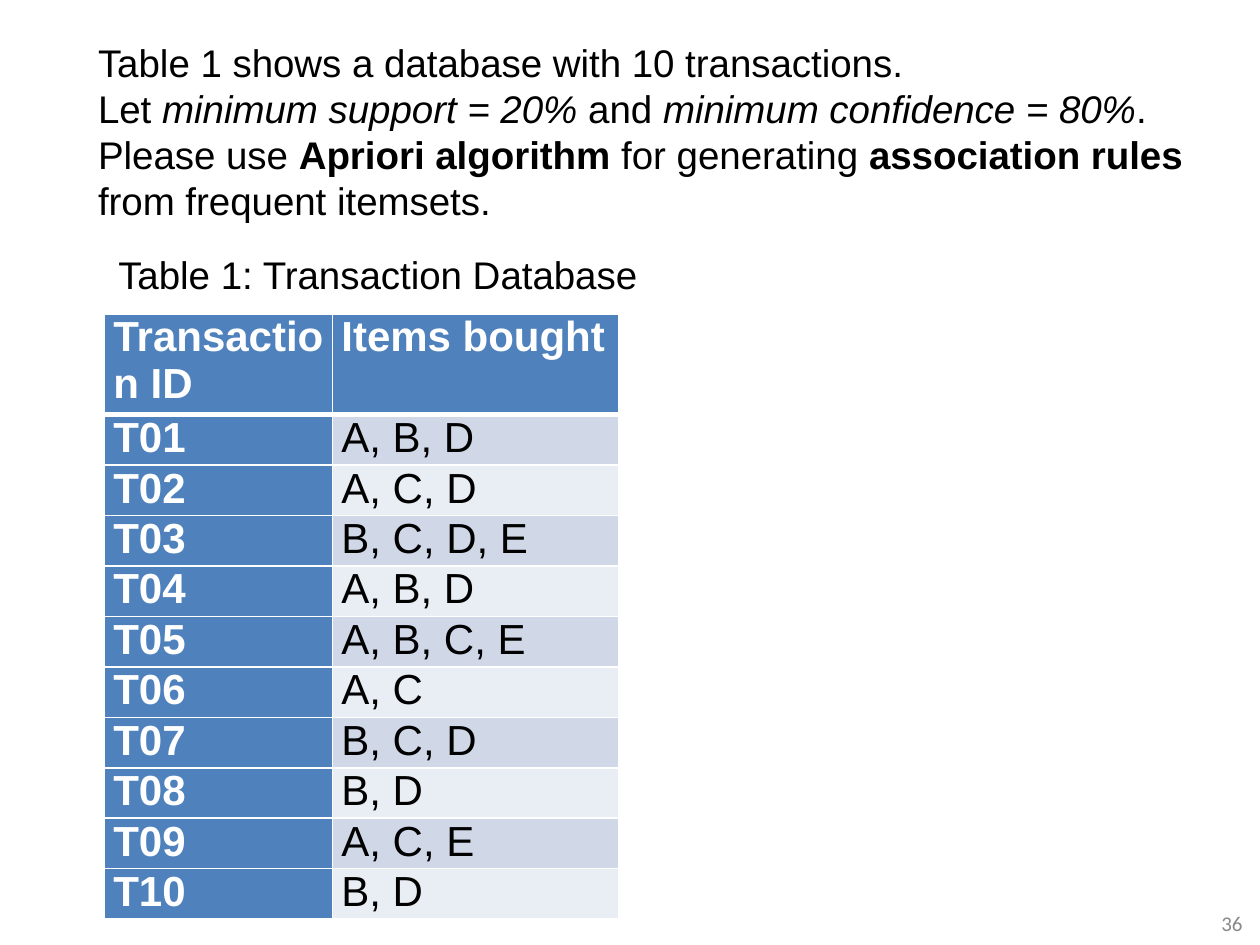
import pptx
import pptx.util
import pptx.dml.color
import pptx.enum.text
import pptx.oxml.ns
from lxml import etree
from pptx.util import Inches

PP_ALIGN = pptx.enum.text.PP_ALIGN
ANCHOR = pptx.enum.text.MSO_ANCHOR
BODY = {"name": "Arial", "size": pptx.util.Pt(22)}
CELL = {"name": "Arial", "size": pptx.util.Pt(24)}

INTRO = [
    [("Table 1 shows a database with 10 transactions.", {})],
    [("Let", {}), (" minimum support = 20%", {"italic": True}), (" and ", {}),
     ("minimum confidence = 80%", {"italic": True}), (". ", {})],
    [("Please use ", {}), ("Apriori algorithm", {"bold": True}),
     (" for generating", {}), (" association rules", {"bold": True}),
     (" from frequent itemsets.", {})],
]
ITEMS = ["A, B, D", "A, C, D", "B, C, D, E", "A, B, D", "A, B, C, E",
         "A, C", "B, C, D", "B, D", "A, C, E", "B, D"]


def rgb(value):
    return pptx.dml.color.RGBColor.from_string(value)


def add_run(p, text, color, **formats):
    r = p.add_run()
    r.text = text
    r.font.color.rgb = rgb(color)
    for name, value in formats.items():
        setattr(r.font, name, value)


def add_text(s, box, lines, color="000000", font=BODY, wrap=True,
             align=PP_ALIGN.LEFT, anchor=ANCHOR.TOP):
    """Text box holding one paragraph, with a line break between lines."""
    tf = s.shapes.add_textbox(*map(Inches, box)).text_frame
    tf.word_wrap = wrap
    tf.vertical_anchor = anchor
    p = tf.paragraphs[0]
    p.alignment = align
    for i, line in enumerate(lines):
        if i:
            p.add_line_break()
        for text, formats in line:
            add_run(p, text, color, **font, **formats)


def set_borders(cell, color, widths):
    """Draw cell borders; the line elements must precede the fill."""
    tc_pr = cell._tc.get_or_add_tcPr()
    qn = pptx.oxml.ns.qn
    for i, (side, width) in enumerate(widths.items()):
        ln = etree.Element(qn(f"a:ln{side}"), w=str(pptx.util.Pt(width)))
        fill = etree.SubElement(ln, qn("a:solidFill"))
        etree.SubElement(fill, qn("a:srgbClr"), val=color)
        tc_pr.insert(i, ln)


def fill_cell(cell, text, fill, color, bold, widths):
    cell.fill.solid()
    cell.fill.fore_color.rgb = rgb(fill)
    cell.margin_left = cell.margin_right = Inches(0.07)
    cell.margin_top = cell.margin_bottom = 0
    add_run(cell.text_frame.paragraphs[0], text, color, bold=bold, **CELL)
    set_borders(cell, "FFFFFF", widths)


def add_transactions(s, box):
    rows = [("Transaction ID", "Items bought")]
    rows += [(f"T{n:02d}", items) for n, items in enumerate(ITEMS, 1)]
    table = s.shapes.add_table(len(rows), 2, *map(Inches, box)).table
    for column, width in zip(table.columns, (1.81, 2.27)):
        column.width = Inches(width)
    # The header takes two row units
    unit = box[3] / (len(rows) + 1)
    for i, row in enumerate(rows):
        table.rows[i].height = Inches(unit if i else 2 * unit)
        widths = {"L": 1, "R": 1, "T": 3 if i == 1 else 1, "B": 1 if i else 3}
        for j, text in enumerate(row):
            heading = i == 0 or j == 0
            band = "D0D8E8" if i % 2 else "E9EDF4"
            fill_cell(table.cell(i, j), text, "4F81BD" if heading else band,
                      "FFFFFF" if heading else "000000", heading, widths)


def main():
    prs = pptx.Presentation()
    prs.slide_width, prs.slide_height = Inches(10), Inches(7.5)
    s = prs.slides.add_slide(prs.slide_layouts[6])
    # Slide number
    add_text(s, (7.63, 7.13, 2.33, 0.4), [[("36", {})]], "898989",
             {"name": "Calibri", "size": pptx.util.Pt(12)},
             align=PP_ALIGN.RIGHT, anchor=ANCHOR.MIDDLE)
    # Task statement
    add_text(s, (0.68, 0.26, 8.97, 1.58), INTRO)
    # Table and its caption
    add_transactions(s, (0.83, 2.49, 4.08, 4.8))
    add_text(s, (0.84, 1.94, 4.38, 0.47),
             [[("Table 1: Transaction Database", {})]], wrap=False)
    prs.save("out.pptx")


if __name__ == "__main__":
    main()
